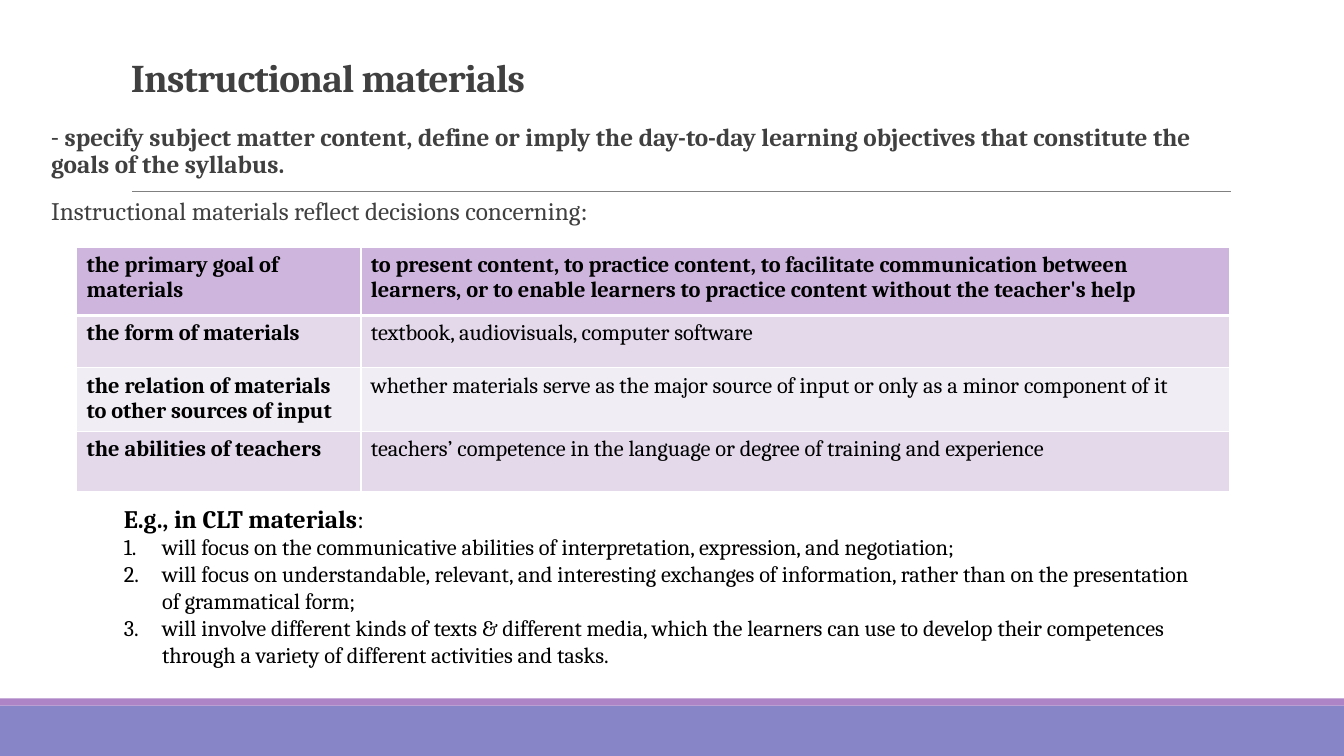
"""Build the slide on instructional materials: definition, decision table and CLT example."""
from dataclasses import dataclass

from lxml import etree
from pptx import Presentation
from pptx.dml.color import RGBColor
from pptx.enum.shapes import MSO_CONNECTOR, MSO_SHAPE
from pptx.enum.text import MSO_ANCHOR
from pptx.oxml.ns import qn
from pptx.util import Inches, Pt

RECTANGLE = MSO_SHAPE.RECTANGLE
STRAIGHT = MSO_CONNECTOR.STRAIGHT
BOTTOM = MSO_ANCHOR.BOTTOM


@dataclass(frozen=True)
class Theme:
    heading_font: str = "Cambria"
    body_font: str = "Calibri"
    title_size: int = 28
    body_size: int = 18
    detail_size: int = 16
    grey: str = "404040"
    black: str = "000000"
    rule: str = "808080"
    footer: str = "8784C7"
    accent: str = "AD84C6"
    border: str = "FFFFFF"
    rows: tuple = ("CEB5DD", "E3D9EA", "F1EDF5", "E3D9EA")


theme = Theme()


def add_text_frame(left, top, width, height):
    frame = slide.shapes.add_textbox(
        Inches(left), Inches(top), Inches(width), Inches(height)).text_frame
    frame.word_wrap = True
    return frame


def style(font, size, color, bold=False):
    font.name = theme.heading_font
    font.size = Pt(size)
    font.bold = bold
    font.color.rgb = RGBColor.from_string(color)


prs = Presentation()
prs.slide_width = Inches(13.33)
prs.slide_height = Inches(7.5)
slide = prs.slides.add_slide(prs.slide_layouts[6])

for top, height, color in ((7, 0.5, theme.footer), (6.93, 0.07, theme.accent)):
    band = slide.shapes.add_shape(
        RECTANGLE, 0, Inches(top), prs.slide_width, Inches(height))
    band.shadow.inherit = False
    band.fill.solid()
    band.fill.fore_color.rgb = RGBColor.from_string(color)
    band.line.fill.background()

title_rule = slide.shapes.add_connector(
    STRAIGHT, Inches(1.31), Inches(1.9), Inches(12.21), Inches(1.9))
title_rule.line.color.rgb = RGBColor.from_string(theme.rule)
title_rule.line.width = Pt(0.5)
etree.SubElement(title_rule._element.spPr, qn("a:effectLst"))

title_frame = add_text_frame(1.2, 0.31, 11, 0.74)
title_frame.vertical_anchor = BOTTOM
title = title_frame.paragraphs[0]
title.line_spacing = 0.85
title_run = title.add_run()
title_run.text = "Instructional materials"
style(title_run.font, theme.title_size, theme.grey, True)
title_run.font._element.set("spc", "-50")

definition = (
    ("- ", theme.body_font, False),
    ("specify subject matter content, define or imply the day-to-day learning "
     "objectives that constitute the goals of the syllabus.", theme.heading_font, True),
)
lead_in = (
    ("Instructional materials reflect decisions concerning", theme.heading_font, False),
    (":", theme.body_font, False),
)
body_frame = add_text_frame(0.41, 1.19, 11.79, 5.84)
body_frame.margin_right = 0
for index, runs in enumerate((definition, lead_in)):
    paragraph = body_frame.add_paragraph() if index else body_frame.paragraphs[0]
    paragraph.line_spacing = 0.9
    paragraph.space_before = Pt(12)
    paragraph.space_after = Pt(2)
    for text, font_name, bold in runs:
        run = paragraph.add_run()
        run.text = text
        style(run.font, theme.body_size, theme.grey, bold)
        run.font.name = font_name

decisions = (
    ("the primary goal of materials",
     "to present content, to practice content, to facilitate communication between "
     "learners, or to enable learners to practice content without the teacher's help"),
    ("the form of materials", "textbook, audiovisuals, computer software"),
    ("the relation of materials to other sources of input",
     "whether materials serve as the major source of input or only as a minor "
     "component of it"),
    ("the abilities of teachers",
     "teachers’ competence in the language or degree of training and experience"),
)
row_heights = (0.68, 0.52, 0.58, 0.59)
table = slide.shapes.add_table(
    len(decisions), 2, Inches(0.76), Inches(2.45),
    Inches(11.44), Inches(sum(row_heights))).table
for column, width in zip(table.columns, (2.82, 8.62)):
    column.width = Inches(width)
for r, decision in enumerate(decisions):
    table.rows[r].height = Inches(row_heights[r])
    for c, text in enumerate(decision):
        cell = table.cell(r, c)
        cell.text = text
        style(cell.text_frame.paragraphs[0].font, theme.detail_size, theme.black,
              r == 0 or c == 0)
        cell.fill.solid()
        cell.fill.fore_color.rgb = RGBColor.from_string(theme.rows[r])
        properties = cell._tc.get_or_add_tcPr()
        for position, side in enumerate(("lnL", "lnR", "lnT", "lnB")):
            below_header = (r, side) in ((0, "lnB"), (1, "lnT"))
            border = etree.Element(qn(f"a:{side}"), w=str(Pt(3 if below_header else 1)))
            border_fill = etree.SubElement(border, qn("a:solidFill"))
            etree.SubElement(border_fill, qn("a:srgbClr"), val=theme.border)
            properties.insert(position, border)

clt_points = (
    "will focus on the communicative abilities of interpretation, expression, and "
    "negotiation;",
    "will focus on understandable, relevant, and interesting exchanges of information, "
    "rather than on the presentation of grammatical form;",
    "will involve different kinds of texts & different media, which the learners can use "
    "to develop their competences through a variety of different activities and tasks.",
)
example_frame = add_text_frame(1.13, 4.94, 10.91, 1.75)
for text, bold in (("E.g., in CLT materials", True), (":", False)):
    run = example_frame.paragraphs[0].add_run()
    run.text = text
    style(run.font, theme.body_size, theme.black, bold)
for text in clt_points:
    point = example_frame.add_paragraph()
    point.text = text
    style(point.font, theme.detail_size, theme.black)
    point_properties = point._p.get_or_add_pPr()
    point_properties.set("marL", str(Inches(0.38)))
    point_properties.set("indent", str(-Inches(0.38)))
    numbering = etree.Element(qn("a:buAutoNum"), type="arabicPeriod")
    point_properties.insert(0, numbering)

prs.save("out.pptx")
